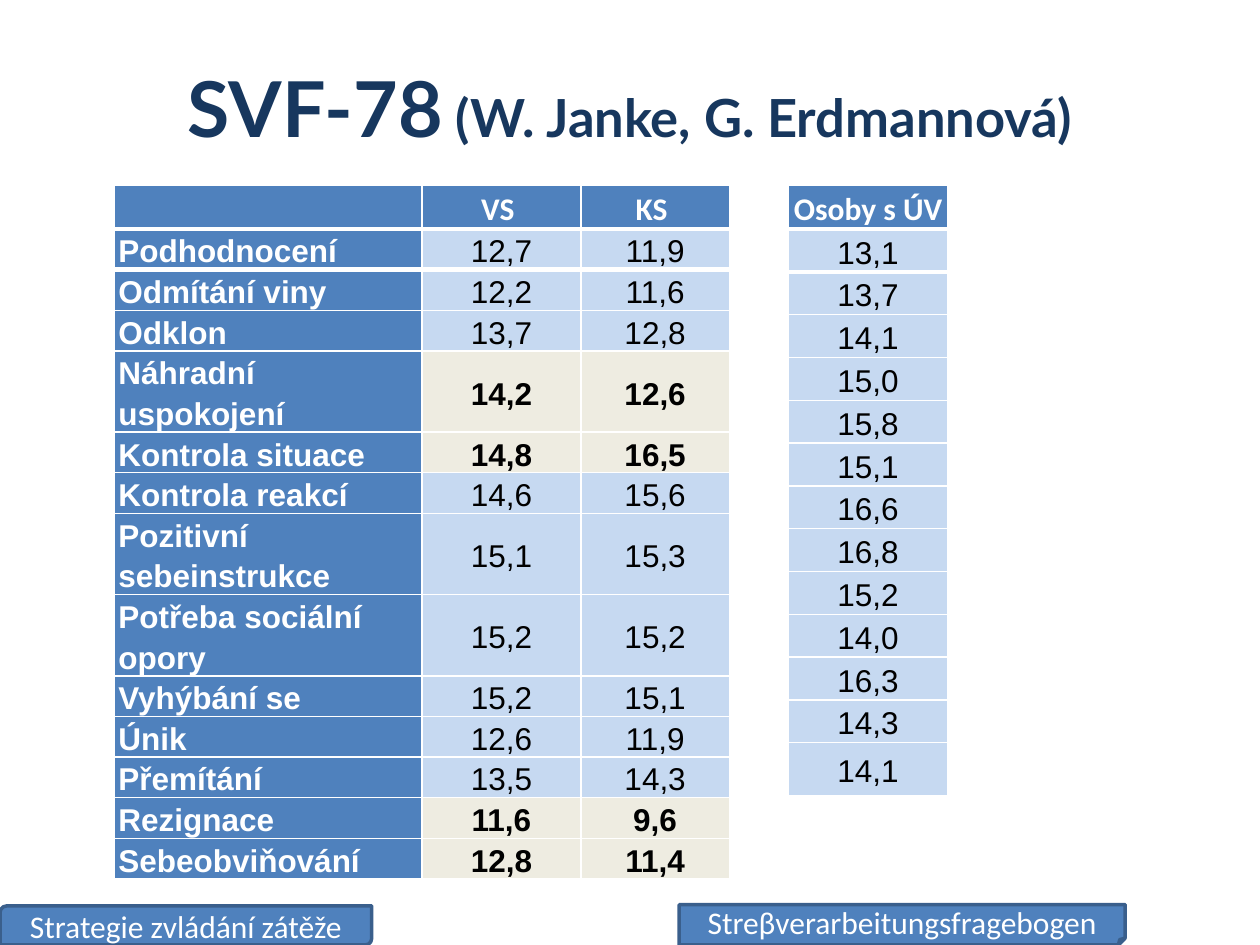
from lxml import etree
from pptx import Presentation
from pptx.dml.color import RGBColor
from pptx.enum.shapes import MSO_SHAPE as Shape
from pptx.enum.text import MSO_ANCHOR as Anchor, PP_ALIGN as Align
from pptx.oxml.ns import qn
from pptx.util import Inches, Pt

NAVY = RGBColor(0x17, 0x37, 0x5E)
BLUE = RGBColor(0x4F, 0x81, 0xBD)
DARK_BLUE = RGBColor(0x3A, 0x5F, 0x8C)
PALE_BLUE = RGBColor(0xC6, 0xD9, 0xF1)
CREAM = RGBColor(0xEE, 0xEC, 0xE1)
WHITE = RGBColor(0xFF, 0xFF, 0xFF)
BLACK = RGBColor(0x00, 0x00, 0x00)

TITLE = [("SVF-78", 44), (" (W. Janke, G. Erdmannová)", 30)]
STRATEGIES = [
    ("", "VS ", "KS "),
    ("Podhodnocení", "12,7", "11,9"),
    ("Odmítání viny", "12,2", "11,6"),
    ("Odklon", "13,7", "12,8"),
    ("Náhradní uspokojení", "14,2", "12,6"),
    ("Kontrola situace", "14,8", "16,5"),
    ("Kontrola reakcí", "14,6", "15,6"),
    ("Pozitivní sebeinstrukce", "15,1", "15,3"),
    ("Potřeba sociální opory", "15,2", "15,2"),
    ("Vyhýbání se", "15,2", "15,1"),
    ("Únik", "12,6", "11,9"),
    ("Přemítání", "13,5", "14,3"),
    ("Rezignace", "11,6", "9,6"),
    ("Sebeobviňování", "12,8", "11,4"),
]
HIGHLIGHTED = {"Náhradní uspokojení", "Kontrola situace", "Rezignace", "Sebeobviňování"}
INJURED = [(value,) for value in (
    "Osoby s ÚV", "13,1", "13,7", "14,1", "15,0", "15,8", "15,1",
    "16,6", "16,8", "15,2", "14,0", "16,3", "14,3", "14,1")]
TABLES = [  # rows, left, column widths, row heights
    (STRATEGIES, 0.91, [2.44, 1.26, 1.18], [0.29] + [0.17] * 13),
    (INJURED, 6.26, [1.26], [0.31] + [0.34] * 12 + [0.42]),
]
TABLE_TOP = 1.47
HEADER_LINE, BODY_LINE = Pt(25), Pt(23.2)  # exact spacing keeps the rows compact
CAPTIONS = [
    ("Streβverarbeitungsfragebogen", Shape.FOLDED_CORNER, (5.39, 7.18, 3.54, 0.32)),
    ("Strategie zvládání zátěže", Shape.ROUND_2_DIAG_RECTANGLE, (0, 7.19, 2.95, 0.31)),
]

HEADER = dict(name="Calibri", size=Pt(18), bold=True)
LABEL = dict(name="Arial", size=Pt(18), bold=True)
VALUE = dict(name="Arial", size=Pt(18), bold=False)
CAPTION = dict(name="Calibri", size=Pt(18), bold=False)


def write(para, text, style, color):
    span = para.add_run()
    span.text = text
    for name, value in style.items():
        setattr(span.font, name, value)
    span.font.color.rgb = color


def fill_cell(cell, text, fill, style, color, align, anchor):
    cell.fill.solid()
    cell.fill.fore_color.rgb = fill
    cell.margin_left = cell.margin_right = Inches(0.03)
    cell.margin_top = cell.margin_bottom = 0
    cell.vertical_anchor = anchor
    para = cell.text_frame.paragraphs[0]
    para.alignment = align
    para.line_spacing = HEADER_LINE if style is HEADER else BODY_LINE
    if text:
        write(para, text, style, color)


def add_thick_edge(cell, side):
    """Draw a 3 pt white border on one side: lnT or lnB."""
    edge = etree.Element(qn(f"a:{side}"), w=str(Pt(3)))
    paint = etree.SubElement(edge, qn("a:solidFill"))
    etree.SubElement(paint, qn("a:srgbClr"), val=str(WHITE))
    cell._tc.get_or_add_tcPr().insert(0, edge)


def add_scores(page, rows, left, widths, heights):
    frame = page.shapes.add_table(
        len(rows), len(widths), Inches(left), Inches(TABLE_TOP),
        Inches(sum(widths)), Inches(sum(heights)))
    table = frame.table
    table.horz_banding = False
    for column, width in zip(table.columns, widths):
        column.width = Inches(width)
    for r, (row, height) in enumerate(zip(rows, heights)):
        table.rows[r].height = Inches(height)
        marked = row[0] in HIGHLIGHTED
        for c, text in enumerate(row):
            look = (PALE_BLUE, VALUE, BLACK, Align.CENTER, Anchor.MIDDLE)
            if r == 0:
                look = (BLUE, HEADER, WHITE, Align.CENTER, Anchor.MIDDLE)
            elif c == 0 and len(row) > 1:
                look = (BLUE, LABEL, WHITE, Align.LEFT, Anchor.TOP)
            elif marked:
                look = (CREAM, LABEL, BLACK, Align.CENTER, Anchor.MIDDLE)
            fill_cell(table.cell(r, c), text, *look)
    for c in range(len(widths)):
        add_thick_edge(table.cell(0, c), "lnB")
        add_thick_edge(table.cell(1, c), "lnT")


def add_caption(page, text, kind, place):
    box = page.shapes.add_shape(kind, *map(Inches, place))
    box.shadow.inherit = False
    box.fill.solid()
    box.fill.fore_color.rgb = BLUE
    box.line.color.rgb = DARK_BLUE
    box.line.width = Pt(2)
    box.text_frame.vertical_anchor = Anchor.MIDDLE
    para = box.text_frame.paragraphs[0]
    para.alignment = Align.CENTER
    write(para, text, CAPTION, WHITE)


deck = Presentation()
deck.slide_width, deck.slide_height = Inches(10), Inches(7.5)
page = deck.slides.add_slide(deck.slide_layouts[6])

title = page.shapes.add_textbox(Inches(0.5), Inches(0.3), Inches(9), Inches(1.09)).text_frame
title.word_wrap = True
title.vertical_anchor = Anchor.MIDDLE
title.paragraphs[0].alignment = Align.CENTER
for text, size in TITLE:
    write(title.paragraphs[0], text, dict(name="Lato", size=Pt(size), bold=True), NAVY)

for scores in TABLES:
    add_scores(page, *scores)
for caption in CAPTIONS:
    add_caption(page, *caption)

deck.save("out.pptx")
